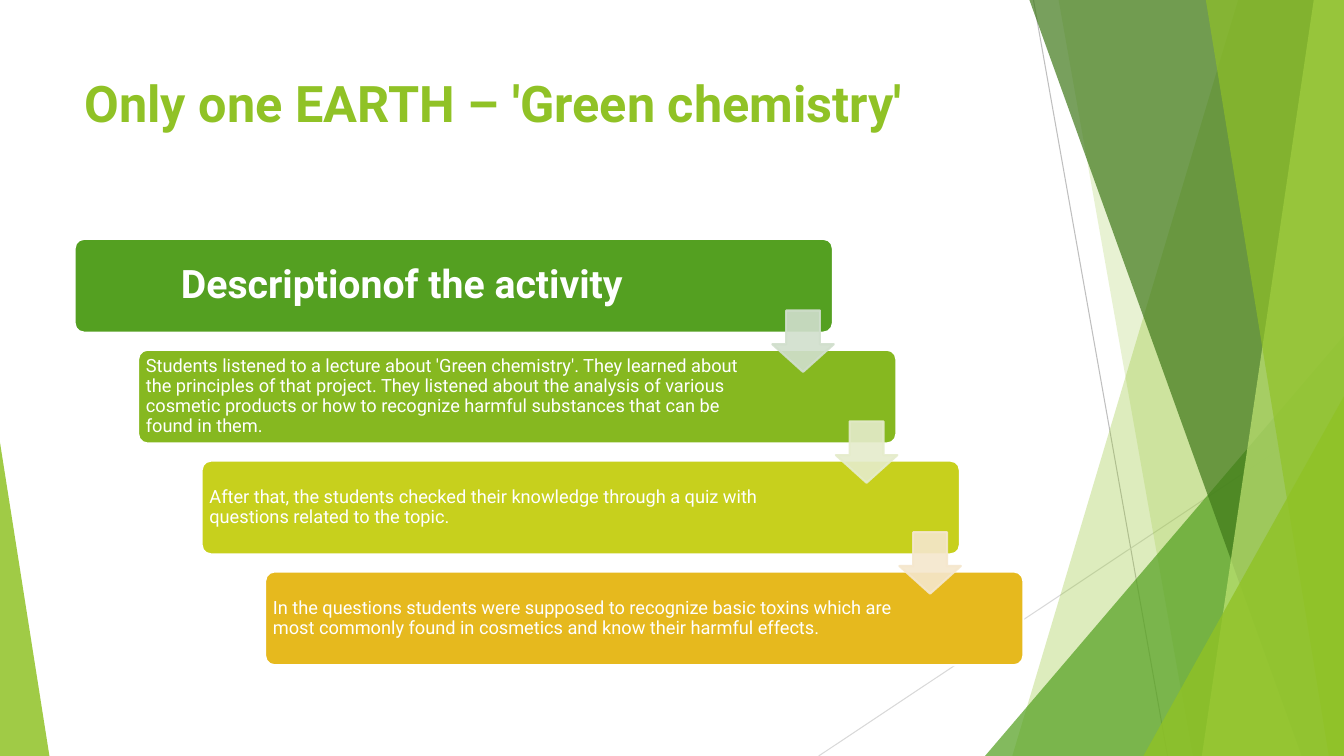
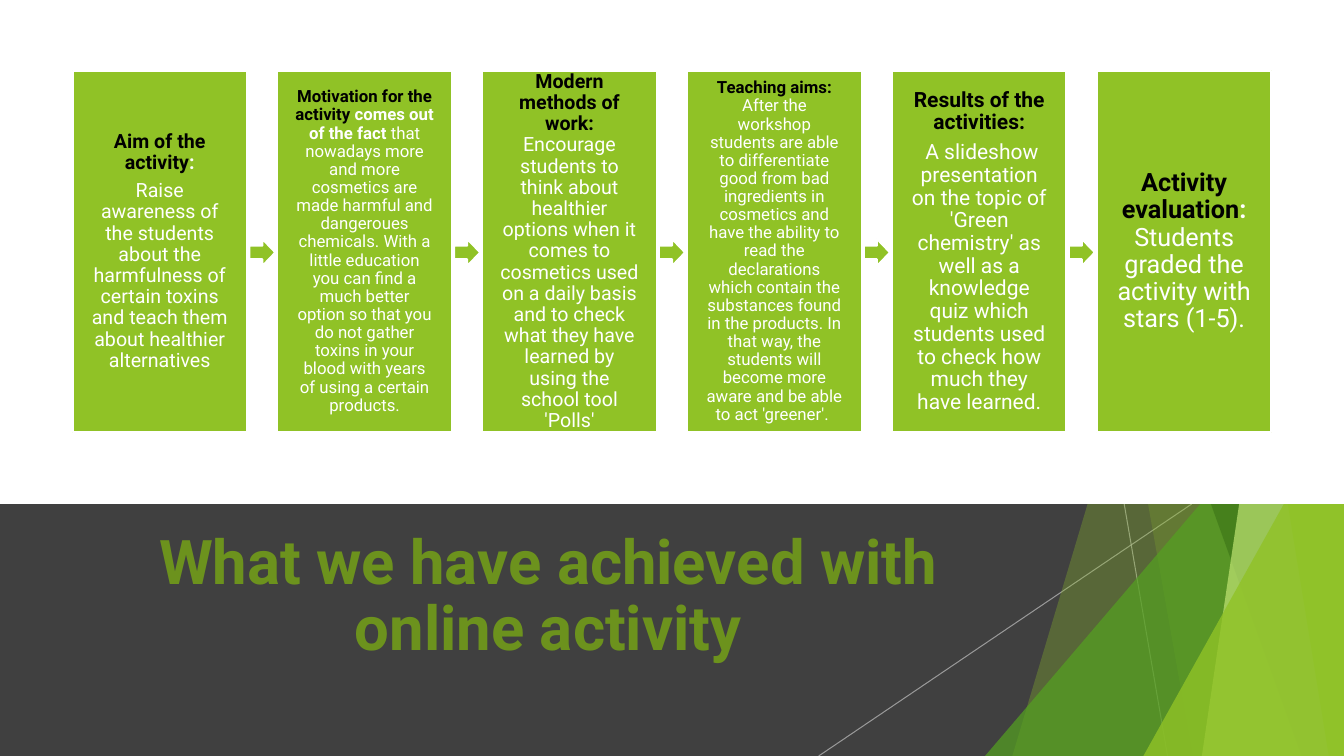
from dataclasses import dataclass

from lxml import etree
from pptx import Presentation
from pptx.dml.color import RGBColor
from pptx.enum.shapes import MSO_CONNECTOR, MSO_SHAPE
from pptx.enum.text import MSO_ANCHOR, PP_ALIGN
from pptx.oxml.ns import qn
from pptx.util import Inches, Pt

STRAIGHT = MSO_CONNECTOR.STRAIGHT
RECTANGLE = MSO_SHAPE.RECTANGLE
ROUNDED = MSO_SHAPE.ROUNDED_RECTANGLE
TRIANGLE = MSO_SHAPE.ISOSCELES_TRIANGLE
DOWN_ARROW = MSO_SHAPE.DOWN_ARROW
RIGHT_ARROW = MSO_SHAPE.RIGHT_ARROW
TOP = MSO_ANCHOR.TOP
MIDDLE = MSO_ANCHOR.MIDDLE
LEFT = PP_ALIGN.LEFT
CENTER = PP_ALIGN.CENTER

WIDTH, HEIGHT = 13.33, 7.5
BAND_TOP = 5


@dataclass(frozen=True)
class Theme:
    font: str = "Roboto"
    white: str = "FFFFFF"
    black: str = "000000"
    lime: str = "90C226"
    green: str = "54A021"
    forest: str = "3F7819"
    pale: str = "C0E474"
    olive: str = "6C921D"
    charcoal: str = "404040"
    gray: str = "BFBFBF"
    light_gray: str = "D9D9D9"
    title: int = 36
    band_title: int = 44
    step_head: int = 28
    step_body: int = 13
    outline: float = 1.5
    hairline: float = 0.75
    tight: float = 0.9
    space_after: float = 0.35


THEME = Theme()

STEPS = [
    ("Descriptionof the activity", THEME.green, "D1DFCD"),
    ("Students listened to a lecture about 'Green chemistry'. They learned about "
     "the principles of that project. They listened about the analysis of various "
     "cosmetic products or how to recognize harmful substances that can be found "
     "in them.", "86B820", "E5ECCB"),
    ("After that, the students checked their knowledge through a quiz with "
     "questions related to the topic.", "C7D01D", "F5E7CD"),
    ("In the questions students were supposed to recognize basic toxins which are "
     "most commonly found in cosmetics and know their harmful effects.",
     "E6B91E", None),
]

HEAD = (THEME.black, True)
LEAD = (THEME.white, True)
BODY = (THEME.white, False)

CARDS = [
    (14, [[("Aim of the activity", HEAD), (":", LEAD)],
          [("Raise awareness of the students about the harmfulness of certain "
            "toxins and teach them about healthier alternatives", BODY)]]),
    (12, [[("Motivation for the activity ", HEAD),
           ("comes out of the fact ", LEAD),
           ("that nowadays more and more cosmetics are made harmful and "
            "dangeroues chemicals. With a little education you can find a much "
            "better option so that you do not gather toxins in your blood with "
            "years of using a certain products.", BODY)]]),
    (14, [[("Modern methods of work: ", HEAD),
           ("Encourage students to think about healthier options when it comes to "
            "cosmetics used on a daily basis and to check what they have learned "
            "by using the school tool 'Polls'", BODY)]]),
    (12, [[("Teaching aims: ", HEAD),
           ("After the workshop students are able to differentiate good from bad "
            "ingredients in cosmetics and have the ability to read the "
            "declarations which contain the substances found in the products. In "
            "that way, the students will become more aware and be able to act "
            "'greener'. ", BODY)]]),
    (15, [[("Results of the activities:", HEAD)],
          [(" A slideshow presentation on the topic of 'Green chemistry' as well "
            "as a knowledge quiz which students used to check how much they have "
            "learned.", BODY)]]),
    (18, [[("Activity evaluation", HEAD), (": ", LEAD),
           ("Students graded the activity with stars (1-5).", BODY)]]),
]


def set_alpha(element, percent):
    for color in element.spPr.iter(qn("a:srgbClr")):
        etree.SubElement(color, qn("a:alpha")).set("val", str(percent * 1000))


def paint(shape, fill, line=None, alpha=100):
    shape.shadow.inherit = False
    shape.fill.solid()
    shape.fill.fore_color.rgb = RGBColor.from_string(fill)
    if line:
        shape.line.color.rgb = RGBColor.from_string(line)
        shape.line.width = Pt(THEME.outline)
    else:
        shape.line.fill.background()
    if alpha < 100:
        set_alpha(shape.element, alpha)


def add_box(page, kind, place, fill, line=None, alpha=100, adjust=()):
    box = page.shapes.add_shape(kind, *map(Inches, place))
    for index, value in enumerate(adjust):
        box.adjustments[index] = value
    paint(box, fill, line, alpha)
    return box


def add_facet(page, top_x, bottom_x, fill, alpha):
    corners = [(top_x, 0), (WIDTH, 0), (WIDTH, HEIGHT), (bottom_x, HEIGHT)]
    points = [(Inches(x), Inches(y)) for x, y in corners]
    builder = page.shapes.build_freeform(*points[0])
    builder.add_line_segments(points[1:])
    paint(builder.convert_to_shape(), fill, alpha=alpha)


def add_corner(page, left, top, fill, alpha):
    place = (left, top, WIDTH - left, HEIGHT - top)
    add_box(page, TRIANGLE, place, fill, alpha=alpha, adjust=[1])


def add_line(page, start, end, color, alpha=100):
    line = page.shapes.add_connector(STRAIGHT, *map(Inches, start + end))
    line.line.color.rgb = RGBColor.from_string(color)
    line.line.width = Pt(THEME.hairline)
    if alpha < 100:
        set_alpha(line.element, alpha)
    etree.SubElement(line.element.spPr, qn("a:effectLst"))


def add_facets(page):
    add_facet(page, 12.28, 10.04, THEME.lime, 30)
    add_facet(page, 10.5, 11.83, THEME.lime, 20)
    add_corner(page, 9.77, 3.33, THEME.green, 72)
    add_facet(page, 10.21, 12.91, THEME.forest, 70)
    add_facet(page, 13.03, 11.92, THEME.pale, 70)
    add_facet(page, 11.96, 13.18, THEME.lime, 65)
    add_corner(page, 11.34, 3.93, THEME.lime, 80)


def write(shape, paragraphs, size, align, anchor=MIDDLE, insets=None,
          spacing=THEME.tight, space_after=THEME.space_after):
    frame = shape.text_frame
    frame.word_wrap = True
    frame.vertical_anchor = anchor
    if insets:
        (frame.margin_left, frame.margin_top,
         frame.margin_right, frame.margin_bottom) = map(Inches, insets)
    for index, spans in enumerate(paragraphs):
        para = frame.add_paragraph() if index else frame.paragraphs[0]
        para.alignment = align
        para.line_spacing = spacing
        para.space_after = Pt(round(size * space_after, 1))
        for text, (color, bold) in spans:
            span = para.add_run()
            span.text = text
            span.font.name = THEME.font
            span.font.size = Pt(size)
            span.font.bold = bold
            span.font.color.rgb = RGBColor.from_string(color)


def add_title(page, text, top, size, color, align, anchor, spacing):
    box = page.shapes.add_textbox(*map(Inches, (0.74, top, 9.4, 1.44)))
    write(box, [[(text, (color, True))]], size, align, anchor,
          spacing=spacing, space_after=0)


def add_steps(page):
    places = [(0.74 + 0.63 * index, 2.37 + 1.1 * index)
              for index in range(len(STEPS))]
    for index, ((left, top), (text, fill, _)) in enumerate(zip(places, STEPS)):
        box = add_box(page, ROUNDED, (left, top, 7.52, 0.93), fill,
                      THEME.white, adjust=[0.1])
        if index == 0:
            write(box, [[(text, LEAD)]], THEME.step_head, CENTER,
                  insets=(0.12, 0.12, 1.15, 0.12))
        else:
            write(box, [[(text, BODY)]], THEME.step_body, LEFT,
                  insets=(0.05, 0.05, 1.28, 0.05))
    for (left, top), (_, _, tint) in zip(places, STEPS):
        if tint:
            add_box(page, DOWN_ARROW, (left + 6.92, top + 0.71, 0.61, 0.61),
                    tint, tint, 90, [0.55, 0.45])


def add_cards(page):
    margin, card_width = 0.72, 1.73
    pitch = (WIDTH - 2 * margin - card_width) / (len(CARDS) - 1)
    for index, (size, paragraphs) in enumerate(CARDS):
        left = margin + index * pitch
        if index:
            add_box(page, RIGHT_ARROW, (left - 0.28, 2.37, 0.26, 0.27),
                    THEME.lime, THEME.white, adjust=[0.5, 0.5])
        card = add_box(page, RECTANGLE, (left, 0.7, card_width, 3.59),
                       THEME.lime, THEME.white)
        write(card, paragraphs, size, CENTER, insets=(0.17,) * 4)


def build_activity(page):
    add_line(page, (10.25, 0), (11.58, HEIGHT), THEME.gray)
    add_line(page, (WIDTH, 4.03), (8.12, HEIGHT), THEME.light_gray)
    add_facets(page)
    add_box(page, TRIANGLE, (0, 4.39, 0.49, 3.11), THEME.lime,
            alpha=85, adjust=[0])
    add_title(page, "Only one EARTH – 'Green chemistry'", 0.67, THEME.title,
              THEME.lime, LEFT, TOP, 1.0)
    add_steps(page)


def build_achievements(page):
    add_box(page, RECTANGLE, (0, BAND_TOP, WIDTH, HEIGHT - BAND_TOP),
            THEME.charcoal)
    add_line(page, (11.15, BAND_TOP), (11.58, HEIGHT), THEME.gray, 70)
    add_line(page, (11.82, BAND_TOP), (8.12, HEIGHT), THEME.gray, 70)
    add_facets(page)
    add_title(page, "What we have achieved with online activity", 5.21,
              THEME.band_title, THEME.olive, CENTER, MIDDLE, THEME.tight)
    add_box(page, RECTANGLE, (0, 0, WIDTH, BAND_TOP), THEME.white)
    add_cards(page)


def main():
    deck = Presentation()
    deck.slide_width = Inches(WIDTH)
    deck.slide_height = Inches(HEIGHT)
    for build in (build_activity, build_achievements):
        build(deck.slides.add_slide(deck.slide_layouts[6]))
    deck.save("out.pptx")


if __name__ == "__main__":
    main()
